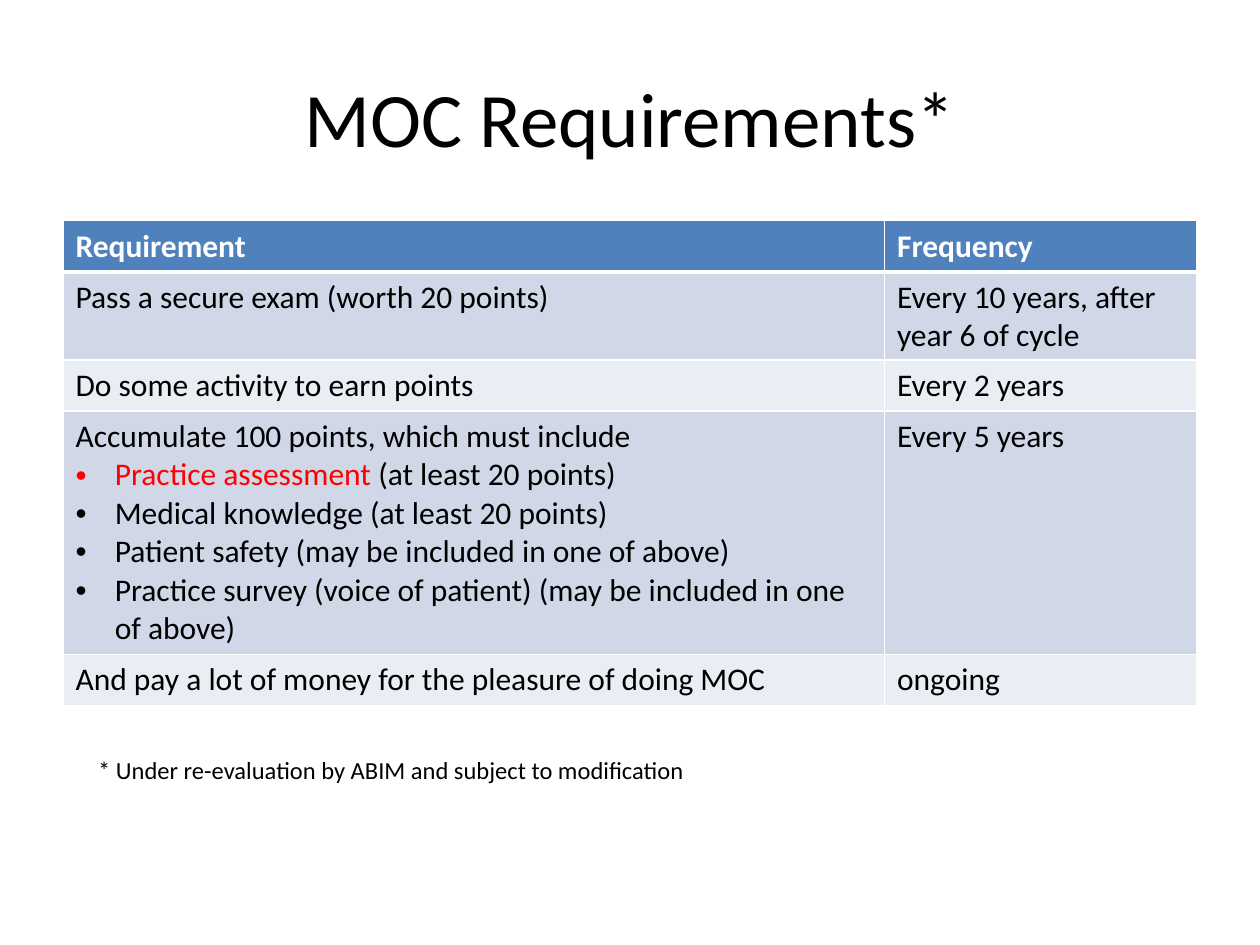
import pptx
import pptx.util
import pptx.dml.color
import pptx.enum.text
import lxml.etree
from pptx.util import Cm, Pt


def color(value):
    return pptx.dml.color.RGBColor.from_string(value)


def style(font, size, value, bold=False):
    font.name = "Calibri"
    font.size = Pt(size)
    font.bold = bold
    font.color.rgb = color(value)


deck = pptx.Presentation()
deck.slide_width = Cm(25.4)
deck.slide_height = Cm(19.05)
page = deck.slides.add_slide(deck.slide_layouts[6])

title_box = page.shapes.add_textbox(Cm(1.27), Cm(0.76), Cm(22.86), Cm(3.18))
title_box.text_frame.word_wrap = True
title_box.text_frame.vertical_anchor = pptx.enum.text.MSO_ANCHOR.MIDDLE
para = title_box.text_frame.paragraphs[0]
para.text = "MOC Requirements*"
para.alignment = pptx.enum.text.PP_ALIGN.CENTER
style(para.font, 44, "000000")

requirements = [
    (1.03, ["Requirement"], "Frequency"),
    (1.78, ["Pass a secure exam (worth 20 points)"], "Every 10 years, after year 6 of cycle"),
    (1.03, ["Do some activity to earn points"], "Every 2 years"),
    (
        4.9,
        [
            "Accumulate 100 points, which must include",
            "Practice assessment |(at least 20 points)",
            "Medical knowledge (at least 20 points)",
            "Patient safety (may be included in one of above)",
            "Practice survey (voice of patient) (may be included in one of above)",
        ],
        "Every 5 years",
    ),
    (1.03, ["And pay a lot of money for the pleasure of doing MOC"], "ongoing"),
]
table_height = Cm(sum(height for height, lines, frequency in requirements))
table = page.shapes.add_table(
    len(requirements), 2, Cm(1.27), Cm(4.45), Cm(22.86), table_height
).table
table.columns[0].width = Cm(16.56)
table.columns[1].width = Cm(6.3)

for row, (height, lines, frequency) in enumerate(requirements):
    header = row == 0
    fill = "4F81BD" if header else ("E9EDF4", "D0D8E8")[row % 2]
    text_color = "FFFFFF" if header else "000000"
    table.rows[row].height = Cm(height)
    for column, texts in enumerate((lines, [frequency])):
        cell = table.cell(row, column)
        if header:
            border = lxml.etree.SubElement(
                cell._tc.get_or_add_tcPr(), pptx.oxml.ns.qn("a:lnB"), w=str(Pt(3))
            )
            solid = lxml.etree.SubElement(border, pptx.oxml.ns.qn("a:solidFill"))
            lxml.etree.SubElement(solid, pptx.oxml.ns.qn("a:srgbClr"), val="FFFFFF")
        cell.fill.solid()
        cell.fill.fore_color.rgb = color(fill)
        for index, text in enumerate(texts):
            frame = cell.text_frame
            para = frame.add_paragraph() if index else frame.paragraphs[0]
            if index:
                properties = para._p.get_or_add_pPr()
                properties.set("marL", str(Cm(0.79)))
                properties.set("indent", str(-Cm(0.79)))
                bullet_font = lxml.etree.SubElement(properties, pptx.oxml.ns.qn("a:buFont"))
                bullet_font.set("typeface", "Arial")
                bullet = lxml.etree.SubElement(properties, pptx.oxml.ns.qn("a:buChar"))
                bullet.set("char", "•")
            parts = text.split("|")
            for part in parts:
                span = para.add_run()
                span.text = part
            if len(parts) > 1:
                style(para.runs[0].font, 18, "FF0000")
                style(para.runs[1].font, 18, text_color)
            else:
                style(para.font, 18, text_color, header)

note_box = page.shapes.add_textbox(Cm(1.73), Cm(15.09), Cm(12.8), Cm(1))
note_box.text_frame.word_wrap = True
para = note_box.text_frame.paragraphs[0]
para.text = "* Under re-evaluation by ABIM and subject to modification"
style(para.font, 14, "000000")

deck.save("out.pptx")
